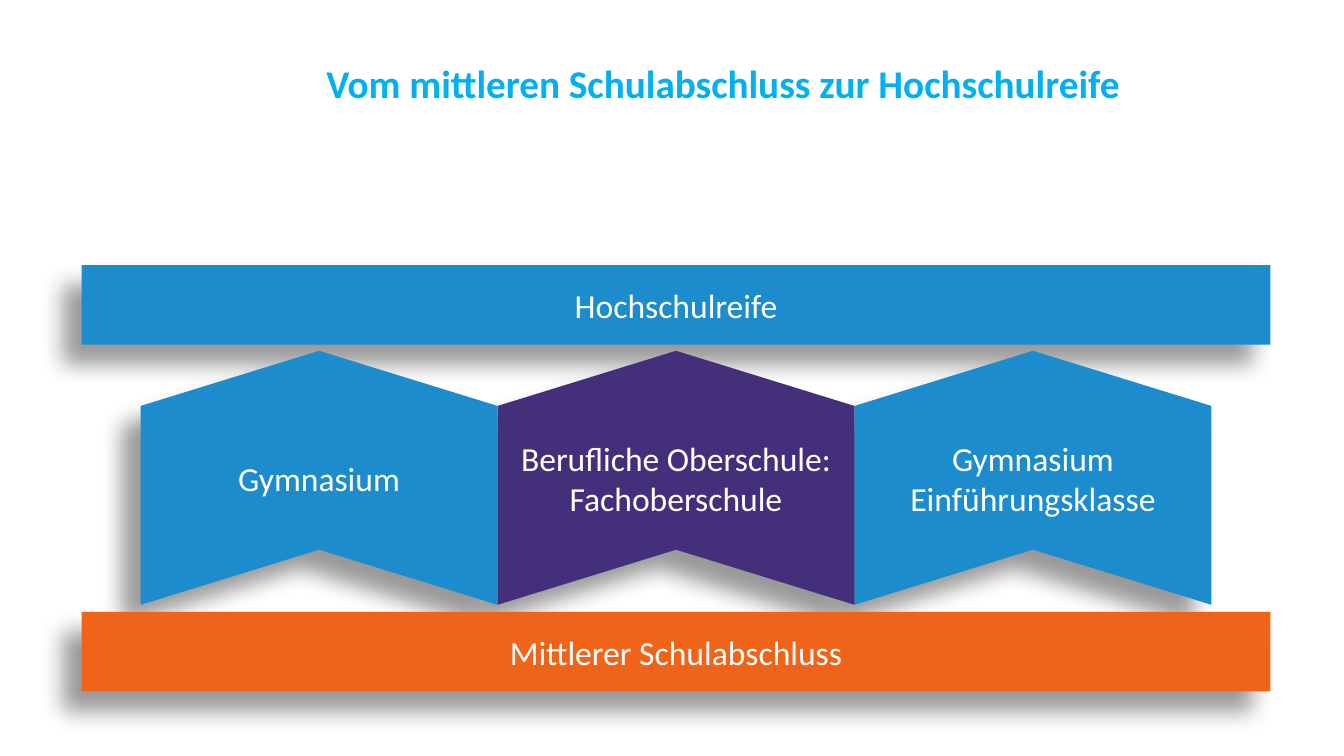
import pptx
import pptx.util
from lxml import etree
from pptx.dml.color import RGBColor
from pptx.enum.shapes import MSO_SHAPE
from pptx.enum.text import MSO_ANCHOR, PP_ALIGN
from pptx.oxml import parse_xml
from pptx.oxml.ns import nsdecls, qn
from pptx.util import Inches, Pt

SKY = RGBColor(0x00, 0xB0, 0xF0)
BLUE = RGBColor(0x1C, 0x8C, 0xCC)
PURPLE = RGBColor(0x44, 0x2F, 0x7B)
ORANGE = RGBColor(0xF0, 0x64, 0x1A)
WHITE = RGBColor(0xFF, 0xFF, 0xFF)

BAR_LEFT, BAR_WIDTH, BAR_HEIGHT = 0.81, 11.79, 0.79
PATH_WIDTH, PATH_HEIGHT, PATH_MIDDLE = 3.54, 2.52, 4.74
SLIDE_MIDDLE = BAR_LEFT + BAR_WIDTH / 2


def write(shape, text, size, color, bold=False):
    frame = shape.text_frame
    frame.word_wrap = True
    frame.text = text
    paragraph = frame.paragraphs[0]
    paragraph.alignment = PP_ALIGN.CENTER
    paragraph.font.name = "Calibri"
    paragraph.font.size = Pt(size)
    paragraph.font.bold = bold
    paragraph.font.color.rgb = color
    return frame


def add_block(preset, left, top, width, height, color, text):
    """Add a filled, captioned shape with a soft shadow to the lower left."""
    block = slide.shapes.add_shape(
        preset, Inches(left), Inches(top), Inches(width), Inches(height))
    block.fill.solid()
    block.fill.fore_color.rgb = color
    block.line.fill.background()
    block._element.spPr.append(parse_xml(
        f'<a:effectLst {nsdecls("a")}>'
        f'<a:outerShdw blurRad="{Pt(16)}" dist="{Pt(19)}" dir="{135 * 60000}" '
        'algn="tr" rotWithShape="0"><a:srgbClr val="000000">'
        '<a:alpha val="40000"/></a:srgbClr></a:outerShdw></a:effectLst>'))
    write(block, text, 24, WHITE).vertical_anchor = MSO_ANCHOR.MIDDLE
    return block


presentation = pptx.Presentation()
presentation.slide_width = Inches(13.33)
presentation.slide_height = Inches(7.5)
slide = presentation.slides.add_slide(presentation.slide_layouts[6])

heading = slide.shapes.add_textbox(
    Inches(2.04), Inches(0.54), Inches(10.26), Inches(0.65))
write(heading, "Vom mittleren Schulabschluss zur Hochschulreife", 28, SKY, bold=True)

add_block(MSO_SHAPE.RECTANGLE, BAR_LEFT, 2.63, BAR_WIDTH, BAR_HEIGHT,
          BLUE, "Hochschulreife")

# The paths are chevrons turned upwards, stacked from right to left
school_paths = [
    (1, BLUE, "Gymnasium\vEinführungsklasse", 29),
    (0, PURPLE, "Berufliche Oberschule: Fachoberschule", 0),
    (-1, BLUE, "Gymnasium", 0),
]
for column, color, caption, space_below in school_paths:
    center = SLIDE_MIDDLE + column * PATH_WIDTH
    school_path = add_block(
        MSO_SHAPE.CHEVRON, center - PATH_HEIGHT / 2, PATH_MIDDLE - PATH_WIDTH / 2,
        PATH_HEIGHT, PATH_WIDTH, color, caption)
    school_path.rotation = 270
    school_path.adjustments[0] = 0.217
    school_path.text_frame._txBody.find(qn("a:bodyPr")).set("vert", "vert")
    school_path.text_frame.paragraphs[0].space_after = Pt(space_below)

add_block(MSO_SHAPE.RECTANGLE, BAR_LEFT, 6.07, BAR_WIDTH, BAR_HEIGHT,
          ORANGE, "Mittlerer Schulabschluss")

presentation.save("out.pptx")
